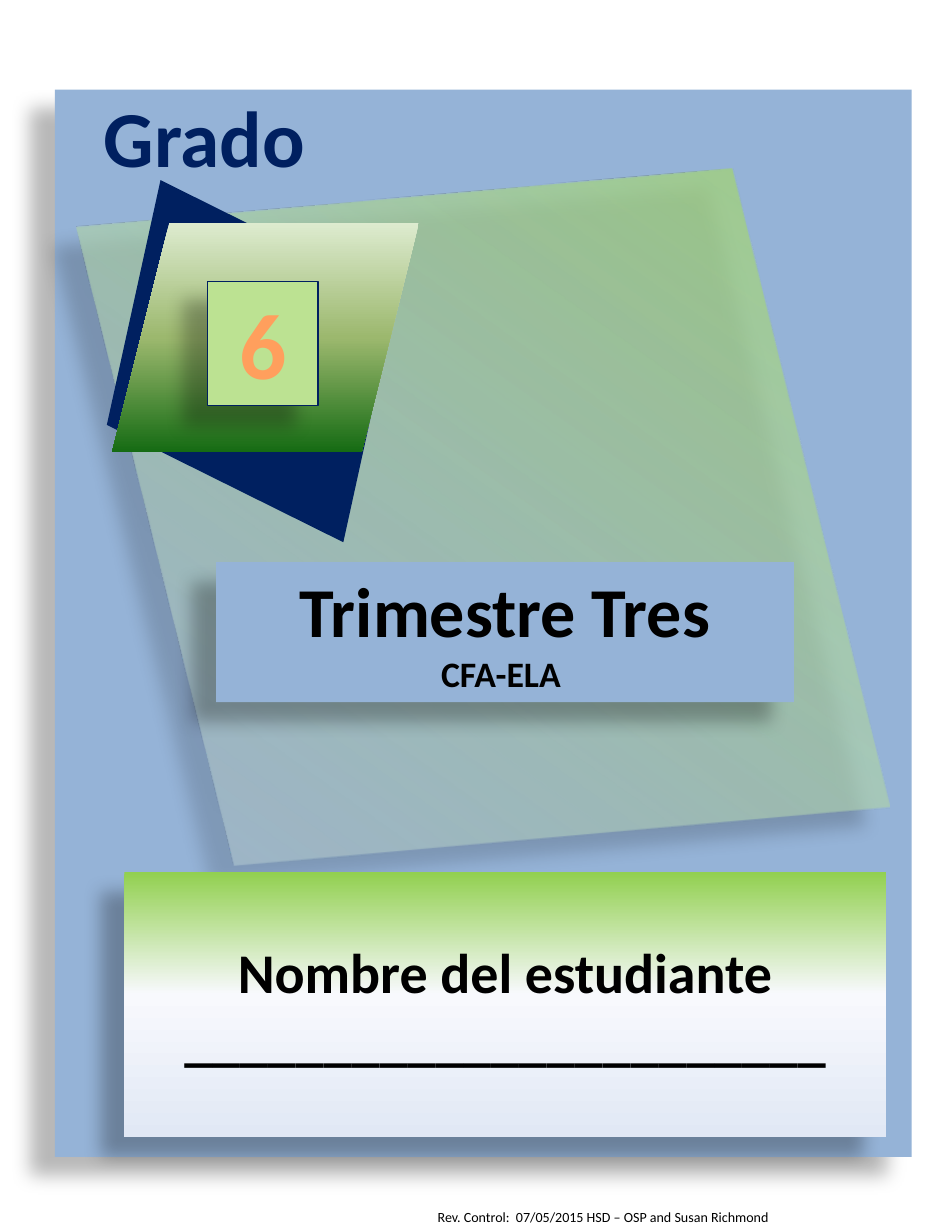
from dataclasses import dataclass
from typing import NamedTuple

from lxml import etree
from pptx import Presentation
from pptx.dml.color import RGBColor
from pptx.enum.shapes import MSO_SHAPE
from pptx.enum.text import MSO_ANCHOR, MSO_AUTO_SIZE, PP_ALIGN
from pptx.oxml.ns import qn
from pptx.util import Inches, Pt

RECT = MSO_SHAPE.RECTANGLE
GEM = MSO_SHAPE.DIAMOND
SLANT = MSO_SHAPE.PARALLELOGRAM
TOP, MID = MSO_ANCHOR.TOP, MSO_ANCHOR.MIDDLE
LEFT, CENTER = PP_ALIGN.LEFT, PP_ALIGN.CENTER
FIT = MSO_AUTO_SIZE.SHAPE_TO_FIT_TEXT
COLS, ROWS = 85, 110
CELL = Inches(0.1)


class Stop(NamedTuple):
    place: int
    color: str
    alpha: int = 100


class Line(NamedTuple):
    text: str
    size: int
    color: str
    bold: bool = True


class Box(NamedTuple):
    col: float
    row: float
    cols: float
    rows: float

    def emu(self) -> list[int]:
        return [round(n * CELL) for n in self]


@dataclass(frozen=True)
class Theme:
    font: str = "Calibri"
    black: str = "000000"
    navy: str = "002060"
    blue: str = "95B3D7"
    lime: str = "BCE292"
    orange: str = "FF9F5D"
    veil: tuple = (Stop(0, "92D050"), Stop(86, "C2D1ED", 42), Stop(100, "E1E8F5"))
    label: tuple = (Stop(0, "92D050"), Stop(46, "F8F9FD"), Stop(100, "E1E8F5"))
    badge: tuple = (Stop(0, "DDEBCF"), Stop(50, "9CB86E"), Stop(100, "156B13"))
    note: int = 9
    sub: int = 23
    name: int = 36
    title: int = 45
    grade: int = 51
    digit: int = 60


T = Theme()


@dataclass(frozen=True)
class Panel:
    kind: int
    box: Box
    fill: str | tuple
    shade: bool = True
    turn: float = 0
    flip: bool = False
    edge: str = ""
    lines: tuple = ()
    align: int = CENTER
    anchor: int = TOP


PANELS = (
    Panel(RECT, Box(4.9, 8, 76.5, 95.3), T.blue),
    Panel(GEM, Box(-1.4, 8, 89.1, 76.4), T.veil, turn=35.5),
    Panel(RECT, Box(19.3, 50.2, 51.6, 12.5), T.blue,
          lines=(Line("Trimestre Tres", T.title, T.black),
                 Line("CFA-ELA ", T.sub, T.black))),
    Panel(RECT, Box(11.1, 77.9, 68, 23.6), T.label, anchor=MID,
          lines=(Line("Nombre del estudiante", T.name, T.black),
                 Line("_" * 23, T.name, T.black))),
    Panel(SLANT, Box(8, 21.4, 29, 21.7), T.navy, shade=False, turn=26.4, flip=True),
    Panel(SLANT, Box(10, 19.9, 27.4, 20.5), T.badge, shade=False),
    Panel(RECT, Box(18.5, 25.1, 9.9, 11.1), T.lime, edge=T.navy, align=LEFT,
          lines=(Line(" 6", T.digit, T.orange),)),
)


def add(root, tag: str, **attrs):
    return etree.SubElement(root, qn(tag), {k: str(v) for k, v in attrs.items()})


def tint(root, color: str, alpha: int = 100) -> None:
    node = add(root, "a:srgbClr", val=color)
    if alpha < 100:
        add(node, "a:alpha", val=alpha * 1000)


def blend(shape, stops: tuple) -> None:
    shape.fill.gradient()
    grad = shape._element.spPr.find(qn("a:gradFill"))
    for child in list(grad):
        grad.remove(child)
    grad.set("rotWithShape", "1")
    group = add(grad, "a:gsLst")
    for stop in stops:
        tint(add(group, "a:gs", pos=stop.place * 1000), stop.color, stop.alpha)
    add(grad, "a:lin", ang=90 * 60000, scaled=0)


def cast(shape) -> None:
    glow = shape._element.spPr.find(qn("a:effectLst"))
    node = add(glow, "a:outerShdw", blurRad=Pt(11.8), dist=Pt(19.7),
               dir=141 * 60000, rotWithShape=0)
    tint(node, T.black, 28)


def write(frame, lines: tuple, align: int) -> None:
    for i, line in enumerate(lines):
        para = frame.add_paragraph() if i else frame.paragraphs[0]
        para.text = line.text
        para.alignment = align
        font = para.font
        font.name, font.size, font.bold = T.font, Pt(line.size), line.bold
        font.color.rgb = RGBColor.from_string(line.color)


def draw(slide, panel: Panel) -> None:
    shape = slide.shapes.add_shape(panel.kind, *panel.box.emu())
    shape.rotation = panel.turn
    shape.shadow.inherit = False
    if panel.flip:
        shape._element.spPr.xfrm.set("flipH", "1")
    if isinstance(panel.fill, str):
        shape.fill.solid()
        shape.fill.fore_color.rgb = RGBColor.from_string(panel.fill)
    else:
        blend(shape, panel.fill)
    if panel.edge:
        shape.line.color.rgb = RGBColor.from_string(panel.edge)
        shape.line.width = Pt(0.75)
    else:
        shape.line.fill.background()
    if panel.shade:
        cast(shape)
    if panel.lines:
        shape.text_frame.vertical_anchor = panel.anchor
        write(shape.text_frame, panel.lines, panel.align)


def label(slide, box: Box, line: Line, wrap: bool) -> None:
    frame = slide.shapes.add_textbox(*box.emu()).text_frame
    frame.word_wrap = wrap
    frame.auto_size = FIT
    write(frame, (line,), LEFT)


def main() -> None:
    deck = Presentation()
    deck.slide_width, deck.slide_height = COLS * CELL, ROWS * CELL
    slide = deck.slides.add_slide(deck.slide_layouts[6])
    label(slide, Box(38.1, 107.4, 42.5, 2.6),
          Line("Rev. Control:  07/05/2015 HSD – OSP and Susan Richmond",
               T.note, T.black, False), True)
    for panel in PANELS:
        draw(slide, panel)
    label(slide, Box(8.3, 7.4, 20.3, 9.6), Line("Grado", T.grade, T.navy), False)
    deck.save("out.pptx")


if __name__ == "__main__":
    main()
